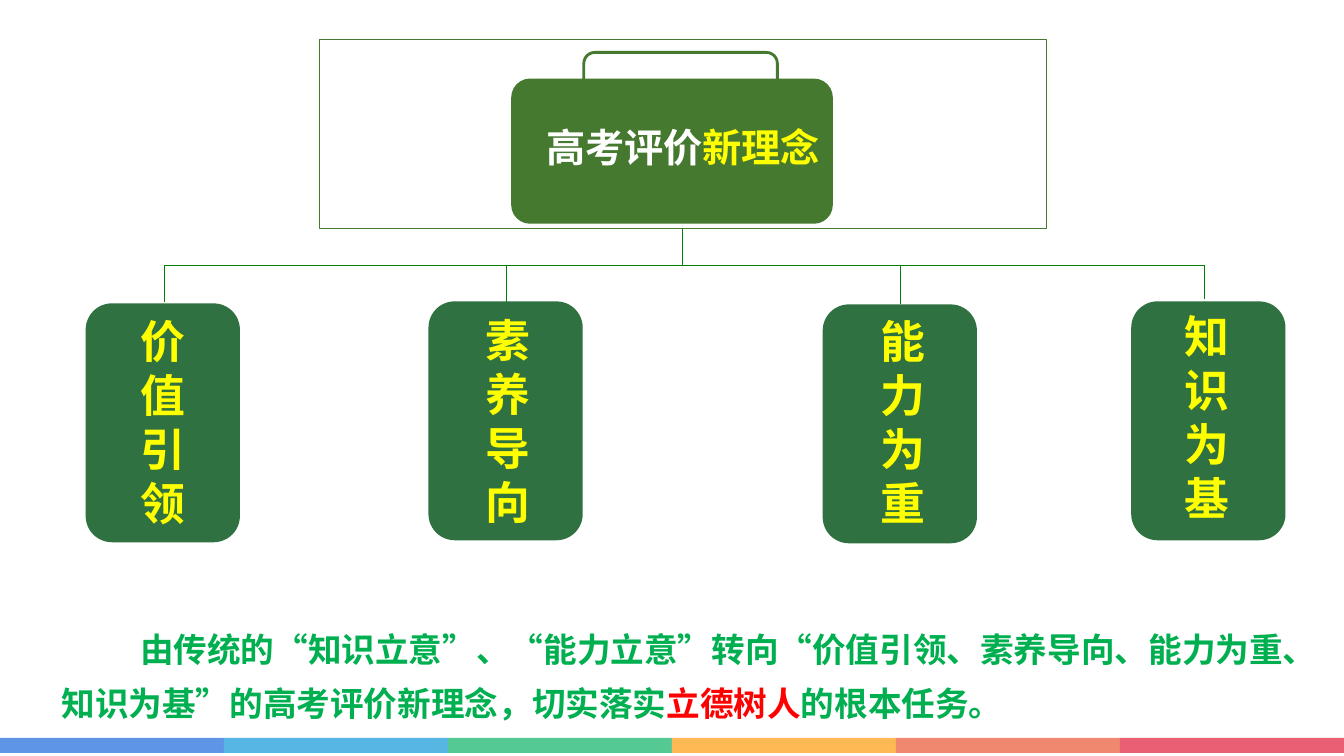
from lxml.etree import SubElement
from pptx import Presentation
from pptx.dml.color import RGBColor
from pptx.enum.shapes import MSO_CONNECTOR as Link, MSO_SHAPE as Form
from pptx.enum.text import MSO_ANCHOR as Anchor, MSO_AUTO_SIZE as Fit, PP_ALIGN as Align
from pptx.oxml.ns import qn
from pptx.util import Inches, Pt

FONT = "Noto Sans CJK SC"
WIDE, HIGH = 13.33, 7.5
WHITE, YELLOW, RED, GREEN = "FFFFFF", "FFFF00", "FF0000", "00AF50"
OLIVE, FOREST, LINE = "467930", "2F7140", "008000"
STRIPS = ["5F95E6", "57B6E4", "55C994", "FFB954", "F0876F", "EB5F74"]

TITLE = [("高考评价", WHITE), ("新理念", YELLOW)]
# words, card left, card top, stem x, stem end, text left, text top
CARDS = [
    ("价 值 引 领", 0.85, 3.01, 1.63, 3.00, 1.39, 3.06),
    ("素 养 导 向", 4.25, 2.99, 5.02, 3.00, 4.82, 3.05),
    ("能 力 为 重", 8.16, 3.02, 8.93, 3.02, 8.73, 3.06),
    ("知 识 为 基", 11.22, 2.99, 11.95, 2.97, 11.75, 3.01),
]
BODY = [
    ("由传统的“知识立意”、“能力立意”转向“价值引领、素养导向、能力为重、 "
     "知识为基”的高考评价新理念，切实落实", GREEN),
    ("立德树人", RED),
    ("的根本任务。", GREEN),
]
CARD_W, CARD_H = 1.53, 2.37
RAIL_Y, HUB_X, FRAME = 2.63, 6.77, (3.17, 0.39, 7.21, 1.88)
PITCH = 38.6  # line pitch in points


def paint(color, hue):
    color.rgb = RGBColor.from_string(hue)


def place(shape, box):
    shape.left, shape.top, shape.width, shape.height = map(Inches, box)


def block(form, box, fill=None, line=None, width=1, round_by=None):
    shape = slide.shapes.add_shape(form, *map(Inches, box))
    shape.shadow.inherit = False
    if round_by is not None:
        shape.adjustments[0] = round_by
    if fill:
        shape.fill.solid()
        paint(shape.fill.fore_color, fill)
    else:
        shape.fill.background()
    if line:
        paint(shape.line.color, line)
        shape.line.width = Pt(width)
    else:
        shape.line.fill.background()


def link(x1, y1, x2, y2, width=0.72):
    wire = slide.shapes.add_connector(Link.STRAIGHT, *map(Inches, (x1, y1, x2, y2)))
    paint(wire.line.color, LINE)
    wire.line.width = Pt(width)
    SubElement(wire._element.spPr, qn("a:effectLst"))


def write(shape, runs, size, align, top=0, anchor=Anchor.TOP, pitch=None):
    frame = shape.text_frame
    frame.word_wrap = True
    frame.auto_size = Fit.NONE
    frame.vertical_anchor = anchor
    frame.margin_left = frame.margin_right = frame.margin_bottom = 0
    frame.margin_top = Inches(top)
    para = frame.paragraphs[0]
    para.alignment = align
    para.space_before = Pt(0)
    if pitch:
        para.line_spacing = Pt(pitch)
    font = para.font
    font.name, font.size, font.bold = FONT, Pt(size), True
    SubElement(font._element, qn("a:ea"), typeface=FONT)
    for words, hue in runs:
        run = para.add_run()
        run.text = words
        paint(run.font.color, hue)
    return para


deck = Presentation()
deck.slide_width, deck.slide_height = Inches(WIDE), Inches(HIGH)
slide = deck.slides.add_slide(deck.slide_layouts[1])
title, body = slide.placeholders

# Colour strips along the foot
step = WIDE / len(STRIPS)
for i, hue in enumerate(STRIPS):
    block(Form.RECTANGLE, (i * step, 7.32, step, 0.15), hue)

# Heading: tab, hub and framed title on top
block(Form.ROUNDED_RECTANGLE, (5.79, 0.52, 1.92, 0.68), line=OLIVE, width=2.04, round_by=0.16)
block(Form.ROUNDED_RECTANGLE, (5.07, 0.78, 3.19, 1.44), OLIVE, round_by=0.13)
place(title, FRAME)
paint(title.line.color, OLIVE)
title.line.width = Pt(0.72)
write(title, TITLE, 28, Align.CENTER, 0.26, Anchor.MIDDLE)
slide.shapes._spTree.append(title._element)

# Tree lines
link(CARDS[0][3], RAIL_Y, CARDS[-1][3], RAIL_Y, 0.48)
link(HUB_X, FRAME[1] + FRAME[3], HUB_X, RAIL_Y)

# Four cards, each with its stem and upright words
for words, left, top, stem, end, text_x, text_y in CARDS:
    link(stem, RAIL_Y, stem, end)
    block(Form.ROUNDED_RECTANGLE, (left, top, CARD_W, CARD_H), FOREST, round_by=0.17)
    box = slide.shapes.add_textbox(*map(Inches, (text_x, text_y, 0.47, 2.16)))
    write(box, [(words, YELLOW)], 32, Align.LEFT, 0.05, pitch=PITCH)

# Closing statement
place(body, (0.6, 6.04, 12.48, 1.11))
props = write(body, BODY, 24, Align.LEFT, 0.06, pitch=PITCH)._p.get_or_add_pPr()
props.set("marL", str(Inches(0.01)))
props.set("indent", str(Inches(0.78)))
props.insert_element_before(props.makeelement(qn("a:buNone")), "a:defRPr")

deck.save("out.pptx")
